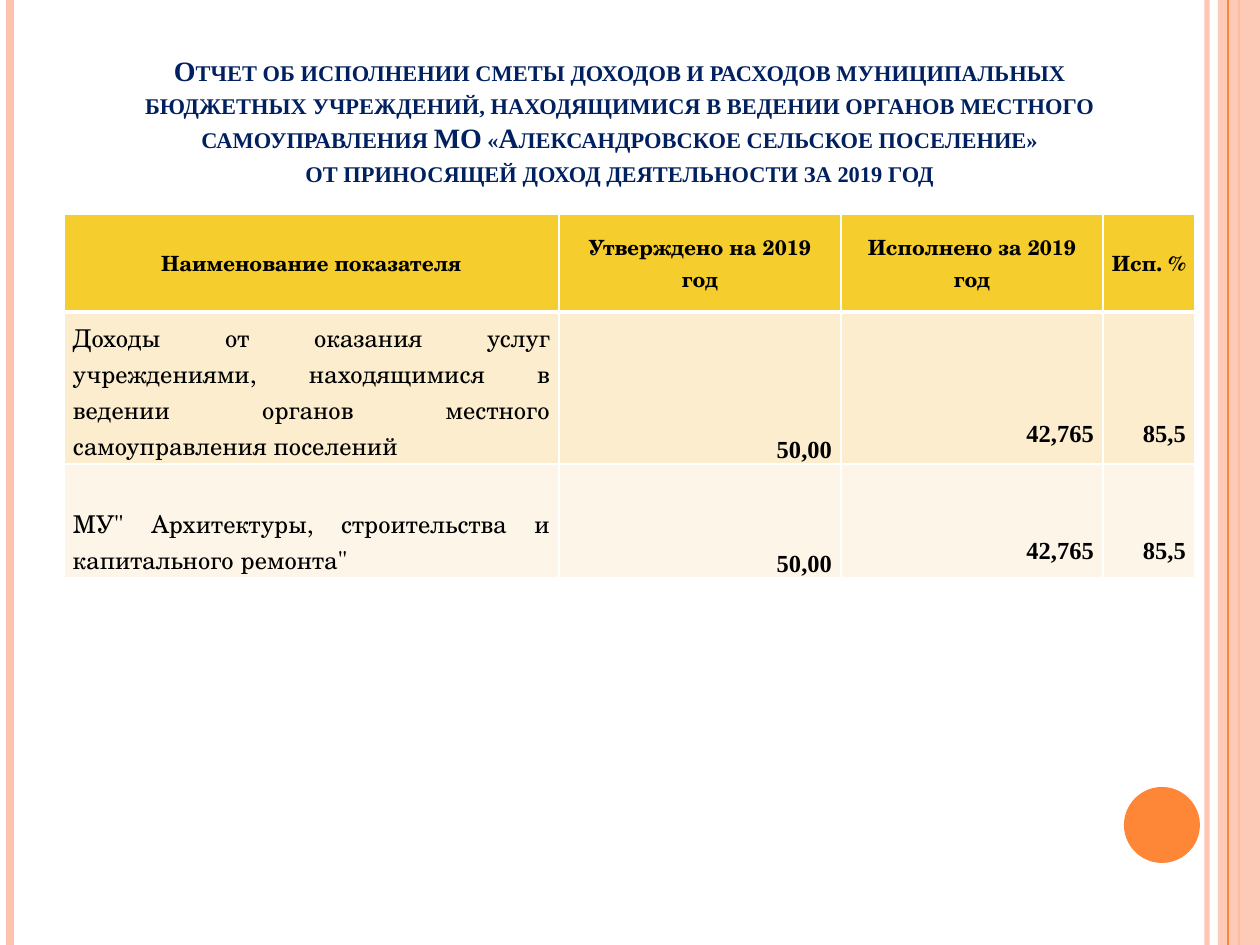
"""Build a slide reporting the income and expense budget of municipal institutions."""
from lxml import etree
from pptx import Presentation
from pptx import util as u
from pptx.dml.color import RGBColor
from pptx.enum import shapes, text
from pptx.oxml.ns import qn

SCALE = 914400 // 126
WIDTH, HEIGHT = 1260, 945
COLORS = {"navy": "002060", "black": "000000", "white": "FFFFFF", "orange": "FE8637",
          "peach": "FEC3AE", "header": "F5CD2D", "odd": "FBEDCD", "even": "FDF6E8"}
SERIF, SCHOOL = "Times New Roman", "TeX Gyre Schola"
LEFT, CENTER, RIGHT, JUSTIFY = (text.PP_ALIGN.LEFT, text.PP_ALIGN.CENTER,
                                text.PP_ALIGN.RIGHT, text.PP_ALIGN.JUSTIFY)
MIDDLE, BOTTOM = text.MSO_ANCHOR.MIDDLE, text.MSO_ANCHOR.BOTTOM

TITLE = ("Отчет об исполнении сметы доходов и расходов муниципальных бюджетных учреждений, "
         "находящимися в ведении органов местного самоуправления "
         "МО «Александровское сельское поселение»\v"
         "от приносящей доход деятельности за 2019 год")
HEADERS = ["Наименование показателя", "Утверждено на 2019 год", "Исполнено за 2019 год", "Исп. %"]
ROWS = [
    ["Доходы от оказания услуг учреждениями, находящимися в ведении органов местного "
     "самоуправления поселений", "50,00", "42,765", "85,5"],
    ["МУ\" Архитектуры, строительства и капитального ремонта\"", "50,00", "42,765", "85,5"],
]
COLUMN_WIDTHS = [495, 282, 262, 92]
ROW_HEIGHTS = [98, 152, 114]
RAISED_MARGINS = [0, 16, 13]
STRIPES = [(1207, "peach", 3, 93), (10, "peach", 4.5, 100), (1239, "orange", 1.5, 100)]
THIN_STRIPE = (1228, "orange", 0.75, 100)
BAND = (1218, 0, 42, HEIGHT)
CIRCLE = (1124, 787, 76, 76)


def px(value):
    return u.Emu(value * SCALE)


def box(*values):
    return [px(value) for value in values]


def paint(fill, color, opacity=100):
    fill.solid()
    fill.fore_color.rgb = RGBColor.from_string(COLORS[color])
    if opacity < 100:
        value = next(fill.fore_color._xFill.iter(qn("a:srgbClr")))
        etree.SubElement(value, qn("a:alpha")).set("val", str(opacity * 1000))


def add_stripe(slide, x, color, width, opacity):
    connector = slide.shapes.add_connector(shapes.MSO_CONNECTOR.STRAIGHT, *box(x, 0, x, HEIGHT))
    connector.line.width = u.Pt(width)
    paint(connector.line.fill, color, opacity)
    etree.SubElement(connector._element.spPr, qn("a:effectLst"))


def add_shape(slide, kind, bounds, color, opacity=100):
    shape = slide.shapes.add_shape(kind, *box(*bounds))
    shape.shadow.inherit = False
    paint(shape.fill, color, opacity)
    shape.line.fill.background()


def format_text(frame, align, size, font, color, bold):
    for paragraph in frame.paragraphs:
        paragraph.alignment = align
        for run in paragraph.runs:
            run.font.size, run.font.name, run.font.bold = u.Pt(size), font, bold
            run.font.color.rgb = RGBColor.from_string(COLORS[color])


def add_title(slide):
    title = slide.shapes.title
    title.left, title.top, title.width, title.height = box(105, 37, 1029, 157)
    frame = title.text_frame
    frame.text = TITLE
    frame.word_wrap, frame.auto_size = True, text.MSO_AUTO_SIZE.NONE
    frame.vertical_anchor = BOTTOM
    format_text(frame, CENTER, 16, SERIF, "navy", True)
    for run in frame.paragraphs[0].runs:
        run.font._element.set("cap", "small")


def set_borders(cell, bottom_width):
    properties = cell._tc.get_or_add_tcPr()
    widths = {"lnL": 1, "lnR": 1, "lnT": 1, "lnB": bottom_width}
    for index, (side, width) in enumerate(widths.items()):
        line = etree.Element(qn(f"a:{side}"), w=str(u.Pt(width)))
        fill = etree.SubElement(line, qn("a:solidFill"))
        etree.SubElement(fill, qn("a:srgbClr")).set("val", COLORS["white"])
        properties.insert(index, line)


def add_table(slide):
    rows = [HEADERS, *ROWS]
    bounds = box(64, 214, sum(COLUMN_WIDTHS), sum(ROW_HEIGHTS))
    table = slide.shapes.add_table(len(rows), len(HEADERS), *bounds).table
    for column, width in zip(table.columns, COLUMN_WIDTHS):
        column.width = px(width)
    for row, height in zip(table.rows, ROW_HEIGHTS):
        row.height = px(height)
    for i, row in enumerate(rows):
        for j, value in enumerate(row):
            cell = table.cell(i, j)
            cell.text_frame.text = value
            cell.margin_left = cell.margin_right = px(9)
            cell.margin_top = 0
            cell.margin_bottom = px(RAISED_MARGINS[i] if j > 1 else 0)
            cell.vertical_anchor = BOTTOM if i else MIDDLE
            paint(cell.fill, ("header", "odd", "even")[i])
            set_borders(cell, 1 if i else 3)
            if i == 0:
                style = CENTER, 12, SCHOOL, "black", True
            elif j == 0:
                style = JUSTIFY, 14, SCHOOL, "black", False
            else:
                style = RIGHT, 14, SERIF, "black", True
            format_text(cell.text_frame, *style)


def main():
    presentation = Presentation()
    presentation.slide_width, presentation.slide_height = box(WIDTH, HEIGHT)
    slide = presentation.slides.add_slide(presentation.slide_layouts[5])
    for stripe in STRIPES:
        add_stripe(slide, *stripe)
    add_shape(slide, shapes.MSO_SHAPE.RECTANGLE, BAND, "peach", 87)
    add_stripe(slide, *THIN_STRIPE)
    add_shape(slide, shapes.MSO_SHAPE.OVAL, CIRCLE, "orange")
    add_title(slide)
    add_table(slide)
    presentation.save("out.pptx")


if __name__ == "__main__":
    main()
